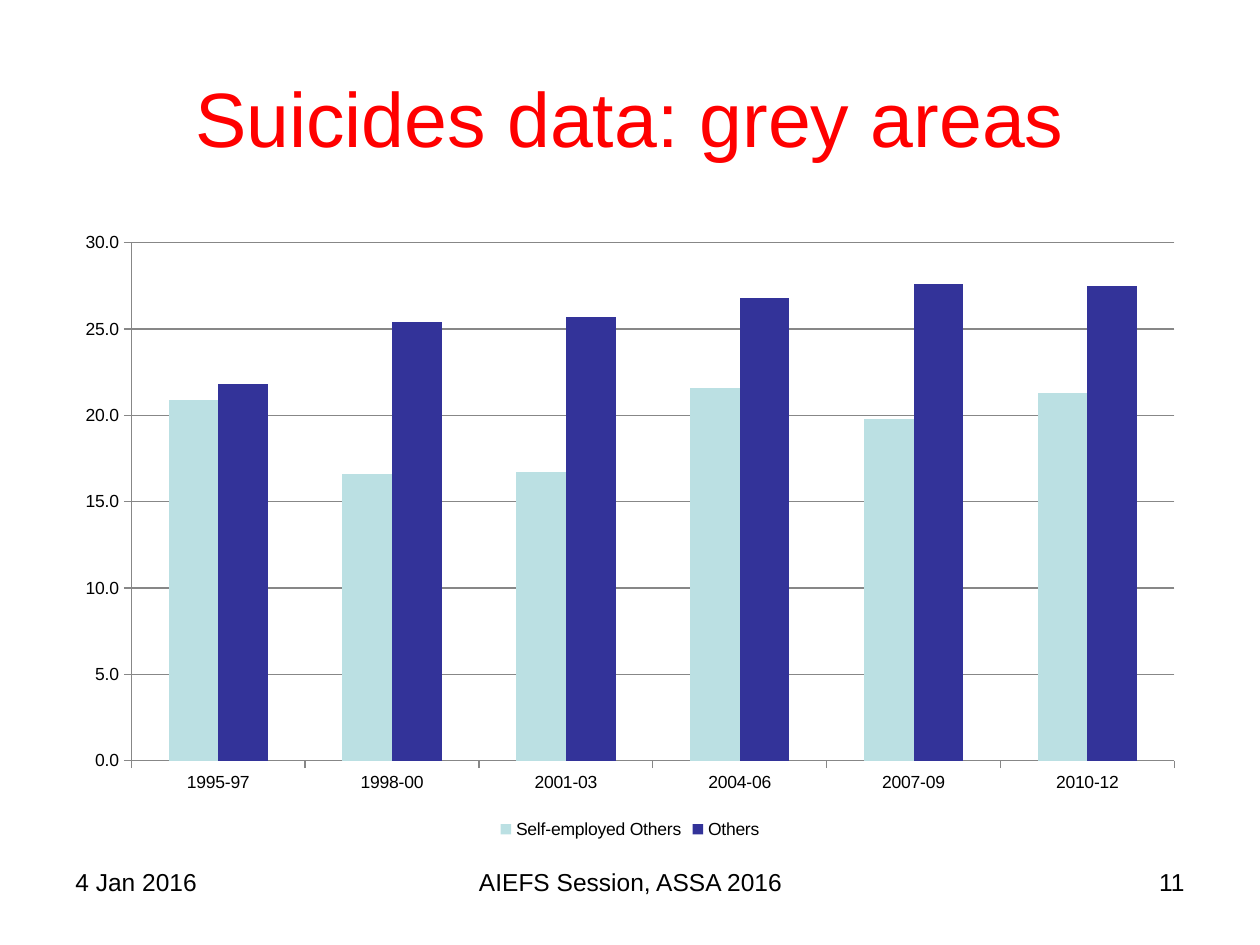
import pptx
import pptx.chart.data
import pptx.dml.color
import pptx.enum.chart
import pptx.enum.text
import pptx.util

Inches = pptx.util.Inches
Pt = pptx.util.Pt
Align = pptx.enum.text.PP_ALIGN
Anchor = pptx.enum.text.MSO_ANCHOR

FONT = "Arial"
COLORS = {"title": "FF0000", "text": "000000", "axis": "878787"}

# text, (left, top, width, height), size, colour, alignment, anchor
TEXTS = [
    ("Suicides data: grey areas", (0.5, 0.3, 9, 1.25), 44, "title", Align.CENTER, Anchor.MIDDLE),
    ("4 Jan 2016", (0.5, 6.83, 2.33, 0.52), 14, "text", Align.LEFT, Anchor.TOP),
    ("AIEFS Session, ASSA 2016", (3.42, 6.83, 3.17, 0.52), 14, "text", Align.CENTER, Anchor.TOP),
    ("11", (7.17, 6.83, 2.33, 0.52), 14, "text", Align.RIGHT, Anchor.TOP),
]

CHART_AREA = (0.5, 1.75, 9, 4.95)
PERIODS = ["1995-97", "1998-00", "2001-03", "2004-06", "2007-09", "2010-12"]
SERIES = [
    ("Self-employed Others", "BBE0E3", [20.9, 16.6, 16.7, 21.6, 19.8, 21.3]),
    ("Others", "333399", [21.8, 25.4, 25.7, 26.8, 27.6, 27.5]),
]


def rgb(value):
    return pptx.dml.color.RGBColor.from_string(value)


def style_font(font, size, color):
    font.name = FONT
    font.size = Pt(size)
    font.color.rgb = rgb(COLORS[color])


def style_line(line):
    line.color.rgb = rgb(COLORS["axis"])
    line.width = Pt(0.75)


def add_text(page, text, area, size, color, align, anchor):
    box = page.shapes.add_textbox(*map(Inches, area))
    frame = box.text_frame
    frame.word_wrap = True
    frame.vertical_anchor = anchor
    para = frame.paragraphs[0]
    para.alignment = align
    span = para.add_run()
    span.text = text
    style_font(span.font, size, color)


def add_column_chart(page):
    data = pptx.chart.data.CategoryChartData(number_format="0.0")
    data.categories = PERIODS
    for name, _, values in SERIES:
        data.add_series(name, values)
    kind = pptx.enum.chart.XL_CHART_TYPE.COLUMN_CLUSTERED
    chart = page.shapes.add_chart(kind, *map(Inches, CHART_AREA), data).chart
    chart.has_title = False
    style_font(chart.font, 10, "text")

    plot = chart.plots[0]
    plot.vary_by_categories = False
    plot.gap_width = 150
    plot.overlap = 0
    for series, (_, color, _) in zip(plot.series, SERIES):
        series.format.fill.solid()
        series.format.fill.fore_color.rgb = rgb(color)

    for axis in (chart.category_axis, chart.value_axis):
        axis.major_tick_mark = pptx.enum.chart.XL_TICK_MARK.OUTSIDE
        style_line(axis.format.line)
    scale = chart.value_axis
    scale.minimum_scale, scale.maximum_scale, scale.major_unit = 0, 30, 5
    scale.tick_labels.number_format = "0.0"
    scale.tick_labels.number_format_is_linked = False
    scale.has_major_gridlines = True
    style_line(scale.major_gridlines.format.line)

    chart.has_legend = True
    chart.legend.position = pptx.enum.chart.XL_LEGEND_POSITION.BOTTOM
    chart.legend.include_in_layout = False


def main():
    deck = pptx.Presentation()
    deck.slide_width, deck.slide_height = Inches(10), Inches(7.5)
    page = deck.slides.add_slide(deck.slide_layouts[6])
    add_column_chart(page)
    for text in TEXTS:
        add_text(page, *text)
    deck.save("out.pptx")


if __name__ == "__main__":
    main()
